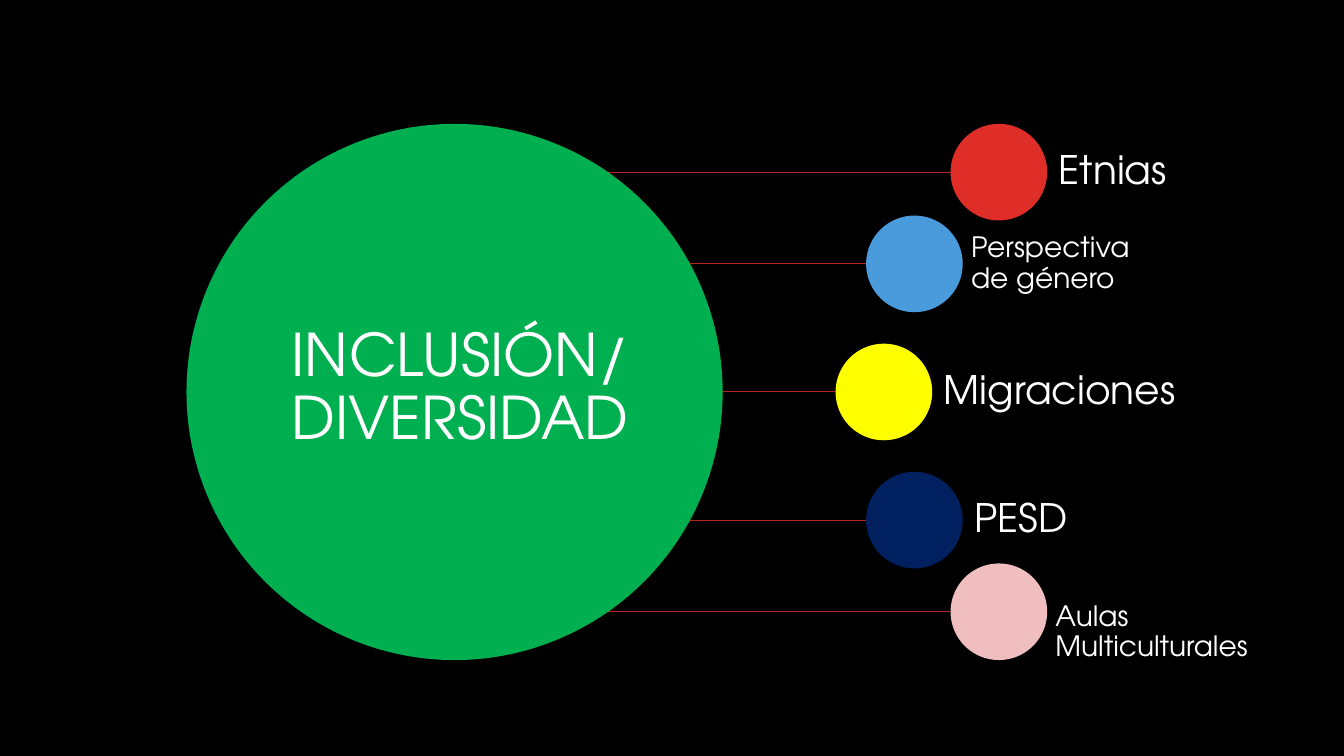
from collections import namedtuple

from lxml.etree import SubElement
from pptx import Presentation
from pptx.dml.color import RGBColor
from pptx.enum.shapes import MSO_CONNECTOR, MSO_SHAPE
from pptx.enum.text import MSO_ANCHOR, PP_ALIGN
from pptx.oxml.ns import qn
from pptx.util import Pt

FONT = "TeX Gyre Adventor"
BLACK = RGBColor(0x00, 0x00, 0x00)
WHITE = RGBColor(0xFF, 0xFF, 0xFF)
GREEN = RGBColor(0x00, 0xB0, 0x50)
DARK_RED = RGBColor(0xB3, 0x25, 0x20)
RED = RGBColor(0xDF, 0x2E, 0x28)
BLUE = RGBColor(0x4A, 0x9B, 0xDC)
YELLOW = RGBColor(0xFF, 0xFF, 0x00)
NAVY = RGBColor(0x00, 0x20, 0x60)
PINK = RGBColor(0xF0, 0xBE, 0xBE)

HUB_DIAMETER = 383
TOPIC_DIAMETER = 69

Topic = namedtuple("Topic", "text color dx dy width size inset drop")
TOPICS = [
    Topic("Etnias", RED, 388.8, -157, 96.5, 28, 8.4, 0),
    Topic("Perspectiva de género", BLUE, 328.5, -91.5, 128, 20, 5.9, 0),
    Topic("Migraciones", YELLOW, 306.7, 0, 188, 28, 8.4, 0),
    Topic("PESD", NAVY, 328.5, 91.5, 87, 28, 8.4, 0),
    Topic("Aulas Multiculturales", PINK, 388.8, 157, 152, 20, 5.9, 14.6),
]


def add_circle(slide, center_x, center_y, diameter, color):
    shape = slide.shapes.add_shape(
        MSO_SHAPE.OVAL,
        Pt(center_x - diameter / 2), Pt(center_y - diameter / 2),
        Pt(diameter), Pt(diameter),
    )
    shape.shadow.inherit = False
    shape.fill.solid()
    shape.fill.fore_color.rgb = color
    shape.line.fill.background()


def add_label(slide, left, top, width, height, text, size, inset=0,
              anchor=MSO_ANCHOR.MIDDLE, alignment=PP_ALIGN.LEFT):
    text_frame = slide.shapes.add_textbox(
        Pt(left), Pt(top), Pt(width), Pt(height)).text_frame
    text_frame.word_wrap = True
    text_frame.vertical_anchor = anchor
    text_frame.margin_left = text_frame.margin_right = Pt(inset)
    text_frame.margin_top = text_frame.margin_bottom = 0
    text_frame.text = text
    paragraph = text_frame.paragraphs[0]
    paragraph.alignment = alignment
    paragraph.line_spacing = 0.9
    font = paragraph.runs[0].font
    font.name = FONT
    font.size = Pt(size)
    font.color.rgb = WHITE


def add_spoke(slide, start_x, end_x, y):
    connector = slide.shapes.add_connector(
        MSO_CONNECTOR.STRAIGHT, Pt(start_x), Pt(y), Pt(end_x), Pt(y))
    connector.line.color.rgb = DARK_RED
    connector.line.width = Pt(0.75)
    SubElement(connector.element.spPr, qn("a:effectLst"))


def add_hub(slide, center_x, center_y):
    add_circle(slide, center_x, center_y, HUB_DIAMETER, GREEN)
    add_label(slide, center_x - 118.8, center_y - 83.5, 245.5, 126.7,
              "INCLUSIÓN/ DIVERSIDAD", 42,
              anchor=MSO_ANCHOR.BOTTOM, alignment=PP_ALIGN.CENTER)


def add_topic(slide, center_x, center_y, topic):
    radius = TOPIC_DIAMETER / 2
    add_circle(slide, center_x, center_y, TOPIC_DIAMETER, topic.color)
    add_label(slide, center_x + radius, center_y - radius + topic.drop,
              topic.width, TOPIC_DIAMETER, topic.text, topic.size, topic.inset)


def add_radial_diagram(slide, center_x, center_y):
    for topic in reversed(TOPICS):
        add_spoke(slide, center_x, center_x + topic.dx, center_y + topic.dy)
    add_hub(slide, center_x, center_y)
    for topic in TOPICS:
        add_topic(slide, center_x + topic.dx, center_y + topic.dy, topic)


def main():
    presentation = Presentation()
    presentation.slide_width = Pt(960)
    presentation.slide_height = Pt(540)
    slide = presentation.slides.add_slide(presentation.slide_layouts[6])
    slide.background.fill.solid()
    slide.background.fill.fore_color.rgb = BLACK
    add_radial_diagram(slide, 324.7, 280)
    presentation.save("out.pptx")


if __name__ == "__main__":
    main()
